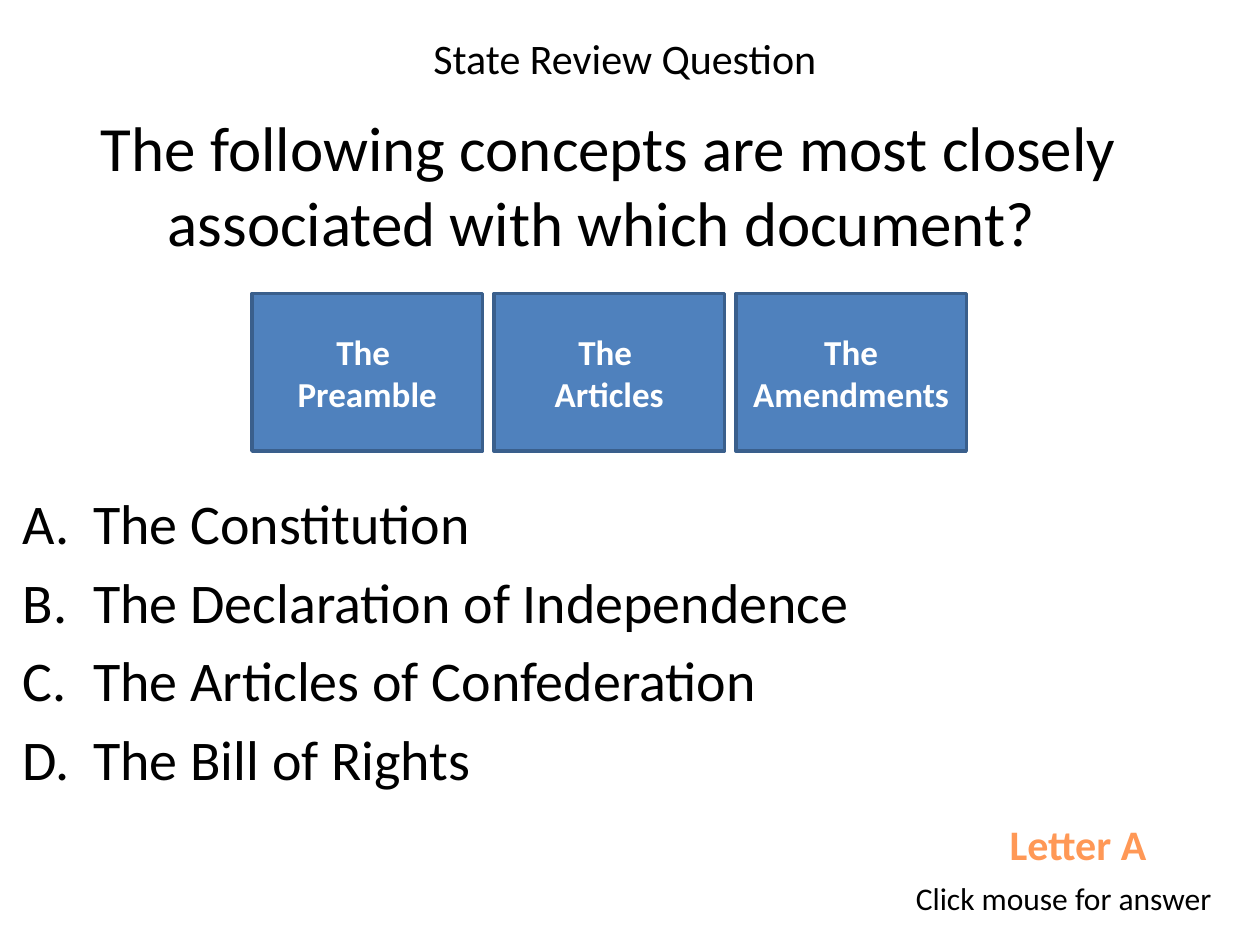
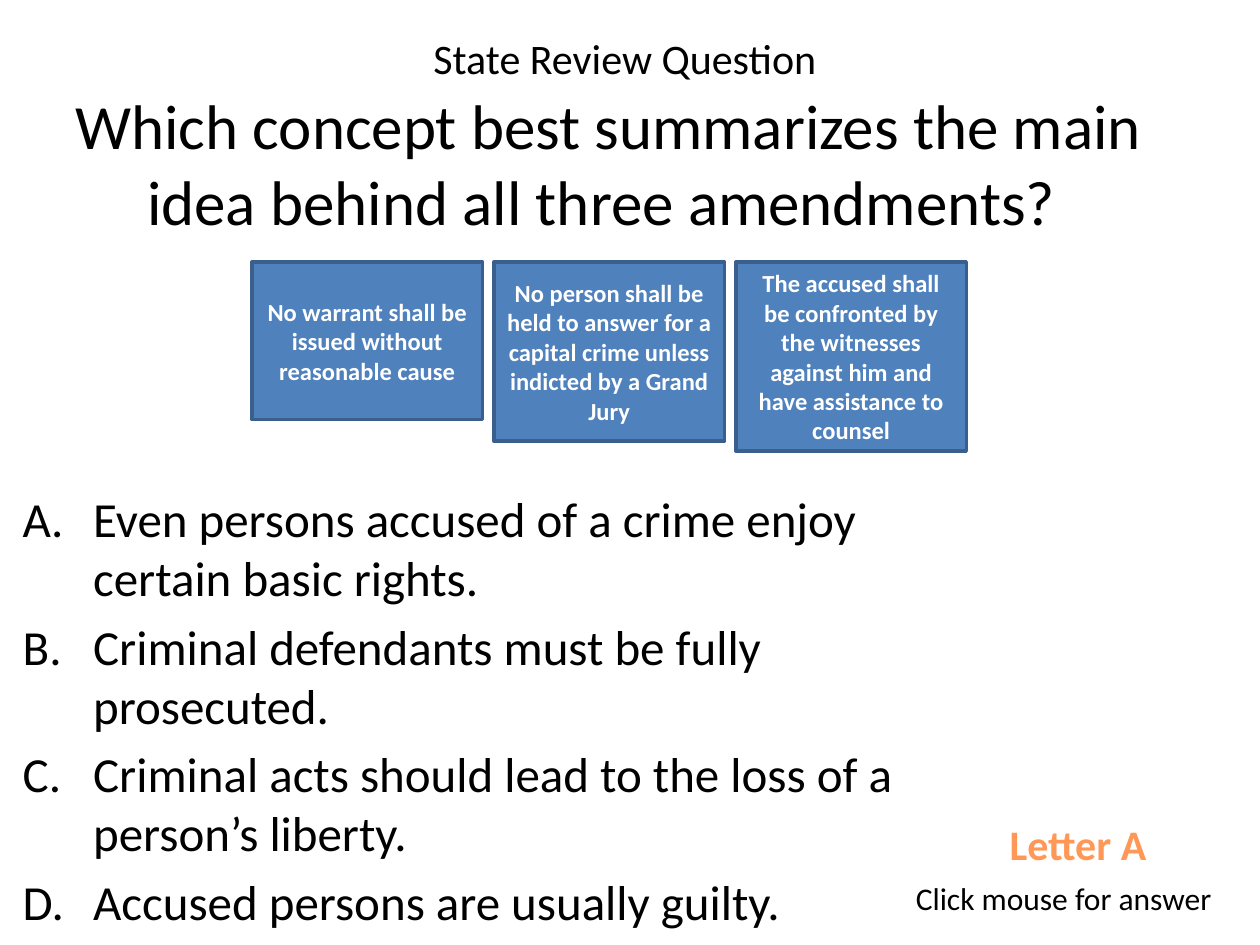
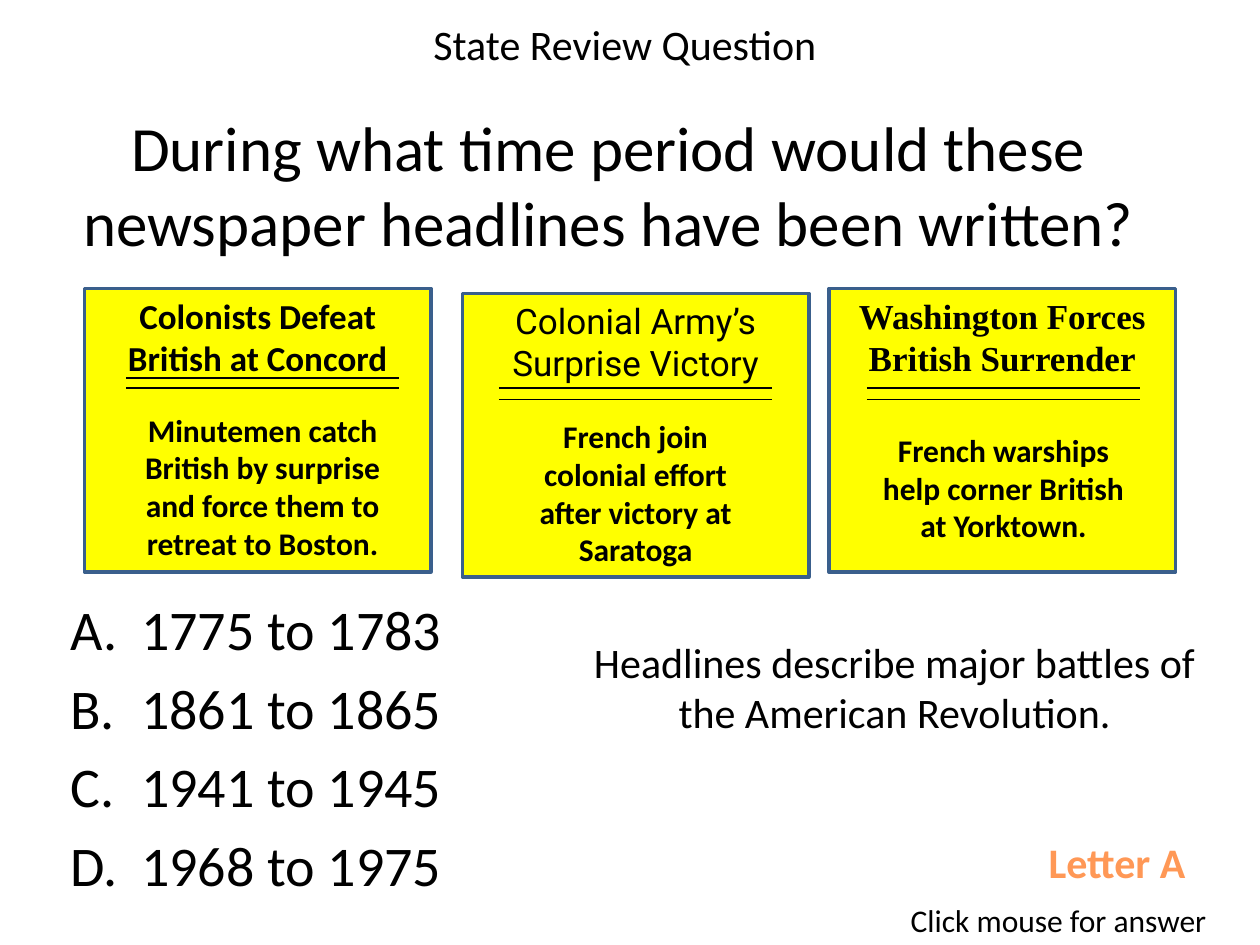
from lxml import etree
from pptx import Presentation
from pptx.dml.color import RGBColor
from pptx.enum import shapes, text
from pptx.oxml.ns import qn
from pptx.util import Inches, Pt

# Shared style
FONT = "Calibri"
BLACK, WHITE = "000000", "FFFFFF"
BLUE, BORDER, YELLOW, ORANGE = "4F81BD", "3A5F8C", "FFFF00", "FF9856"
CENTER, LEFT = text.PP_ALIGN.CENTER, text.PP_ALIGN.LEFT
TOP, MIDDLE = text.MSO_ANCHOR.TOP, text.MSO_ANCHOR.MIDDLE
HEADING = "State Review Question"
ANSWER = "Letter A"
PROMPT = "Click mouse for answer"
INDENT = 0.56

# Concept boxes: left edge of the first, step to the next, width
BOX_LEFT, BOX_STEP, BOX_WIDTH = 2, 1.92, 1.83
# Newspaper cards
CARD_WIDTH, CARD_HEIGHT, STORY_WIDTH = 2.75, 2.25, 2.17

QUESTIONS = [
    {
        "question": "The following concepts are most closely associated with which document? ",
        "question_top": 0.75,
        "choices": ["The Constitution", "The Declaration of Independence",
                    "The Articles of Confederation", "The Bill of Rights"],
        "choices_at": (0.08, 3.83, 6.83, 3.5), "choice_size": 32,
        "concepts": [(["The ", "Preamble"], 1.25), (["The ", "Articles"], 1.25),
                     (["The Amendments"], 1.25)],
        "concept_top": 2.33, "concept_size": 20,
        "heading_height": 0.58, "answer_at": (7.9, 6.45), "prompt_at": (7.17, 6.93),
    },
    {
        "question": "Which concept best summarizes the main idea behind all three amendments? ",
        "question_top": 0.58,
        "choices": ["Even persons accused of a crime enjoy certain basic rights.",
                    "Criminal defendants must be fully prosecuted.",
                    "Criminal acts should lead to the loss of a person’s liberty.",
                    "Accused persons are usually guilty."],
        "choices_at": (0.08, 3.83, 7.25, 3.5), "choice_size": 28,
        "concepts": [
            (["No warrant shall be issued without reasonable cause"], 1.25),
            (["No person shall be held to answer for a capital crime unless "
              "indicted by a Grand Jury"], 1.42),
            (["The accused shall be confronted by the witnesses against him "
              "and have assistance to counsel"], 1.5)],
        "concept_top": 2.08, "concept_size": 14,
        "heading_height": 0.58, "answer_at": (7.9, 6.45), "prompt_at": (7.17, 6.93),
    },
    {
        "question": "During what time period would these newspaper headlines have been written?",
        "question_top": 0.75,
        "choices": ["1775 to 1783", "1861 to 1865", "1941 to 1945", "1968 to 1975"],
        "choices_at": (0.46, 4.67, 4.29, 2.67), "choice_size": 32,
        "newspapers": [
            {"headline": "Colonists Defeat British at Concord", "font": FONT, "bold": True,
             "at": (0.67, 2.29), "rules": (3, 3.08), "story_at": (1, 3.21), "story_height": 1.31,
             "story": "Minutemen catch British by surprise and force them to retreat to Boston."},
            {"headline": "Colonial Army’s Surprise Victory", "font": "Roboto", "bold": False,
             "at": (3.67, 2.33), "rules": (3.08, 3.17), "story_at": (3.96, 3.26),
             "story_height": 1.31,
             "story": "French join colonial effort after victory at Saratoga"},
            {"headline": "Washington Forces British Surrender", "font": "Times New Roman",
             "bold": True, "at": (6.58, 2.29), "rules": (3.08, 3.17), "story_at": (6.88, 3.37),
             "story_height": 1.01,
             "story": "French warships help corner British at Yorktown."}],
        "explanation": "Headlines describe major battles of the American Revolution.",
        "heading_height": 0.35, "answer_at": (8.21, 6.59), "prompt_at": (7.13, 7.1),
    },
]


def color(hex_code):
    return RGBColor.from_string(hex_code)


def place(part, left, top, width, height):
    part.left, part.top = Inches(left), Inches(top)
    part.width, part.height = Inches(width), Inches(height)


def write(part, lines, size, ink=BLACK, bold=False, font=FONT,
          align=CENTER, anchor=TOP, wrap=True):
    frame = part.text_frame
    frame.auto_size = text.MSO_AUTO_SIZE.NONE
    frame.word_wrap = wrap
    frame.vertical_anchor = anchor
    for i, line in enumerate(lines):
        paragraph = frame.paragraphs[0] if i == 0 else frame.add_paragraph()
        paragraph.alignment = align
        run = paragraph.add_run()
        run.text = line
        run.font.size, run.font.bold, run.font.name = Pt(size), bold, font
        run.font.color.rgb = color(ink)


def add_text(slide, at, line, size, **style):
    write(slide.shapes.add_textbox(*map(Inches, at)), [line], size, **style)


def add_box(slide, at, fill, lines, size, **style):
    box = slide.shapes.add_shape(shapes.MSO_SHAPE.RECTANGLE, *map(Inches, at))
    box.shadow.inherit = False
    box.fill.solid()
    box.fill.fore_color.rgb = color(fill)
    box.line.color.rgb = color(BORDER)
    box.line.width = Pt(2)
    write(box, lines, size, **style)


def add_rule(slide, left, top, width):
    rule = slide.shapes.add_connector(
        shapes.MSO_CONNECTOR.STRAIGHT, *map(Inches, (left, top, left + width, top)))
    rule.line.color.rgb = color(BLACK)
    rule.line.width = Pt(1)
    etree.SubElement(rule._element.spPr, qn("a:effectLst"))


def letter_choices(body):
    for paragraph in body.text_frame.paragraphs:
        props = paragraph._p.get_or_add_pPr()
        props.set("marL", str(Inches(INDENT)))
        props.set("indent", str(-Inches(INDENT)))
        etree.SubElement(props, qn("a:buFont"), typeface="+mj-lt")
        etree.SubElement(props, qn("a:buAutoNum"), type="alphaUcPeriod")


def add_newspaper(slide, paper):
    add_box(slide, (*paper["at"], CARD_WIDTH, CARD_HEIGHT), YELLOW, [paper["headline"]], 20,
            bold=paper["bold"], font=paper["font"])
    left, top = paper["story_at"]
    for rule_top in paper["rules"]:
        add_rule(slide, left, rule_top, STORY_WIDTH)
    add_text(slide, (left, top, STORY_WIDTH, paper["story_height"]), paper["story"], 18,
             bold=True)


def add_question(deck, item):
    slide = deck.slides.add_slide(deck.slide_layouts[1])

    # Question and lettered choices
    question, choices = slide.shapes.title, slide.placeholders[1]
    place(question, 0.33, item["question_top"], 9, 1.42)
    write(question, [item["question"]], 36, anchor=MIDDLE)
    place(choices, *item["choices_at"])
    write(choices, item["choices"], item["choice_size"], align=LEFT)
    letter_choices(choices)

    # Evidence: concept boxes or newspaper cards
    for i, (lines, height) in enumerate(item.get("concepts", [])):
        add_box(slide, (BOX_LEFT + i * BOX_STEP, item["concept_top"], BOX_WIDTH, height),
                BLUE, lines, item["concept_size"], ink=WHITE, bold=True, anchor=MIDDLE)
    for paper in item.get("newspapers", []):
        add_newspaper(slide, paper)
    if "explanation" in item:
        add_text(slide, (4.47, 5, 5.26, 0.91), item["explanation"], 24)

    # Heading, answer and prompt
    add_text(slide, (0.46, 0.17, 9, item["heading_height"]), HEADING, 24, anchor=MIDDLE)
    add_text(slide, (*item["answer_at"], 1.31, 0.5), ANSWER, 24, ink=ORANGE, bold=True,
             wrap=False)
    add_text(slide, (*item["prompt_at"], 2.63, 0.4), PROMPT, 18, align=LEFT)


def main():
    deck = Presentation()
    deck.slide_width, deck.slide_height = Inches(10), Inches(7.5)
    for item in QUESTIONS:
        add_question(deck, item)
    deck.save("out.pptx")


if __name__ == "__main__":
    main()
